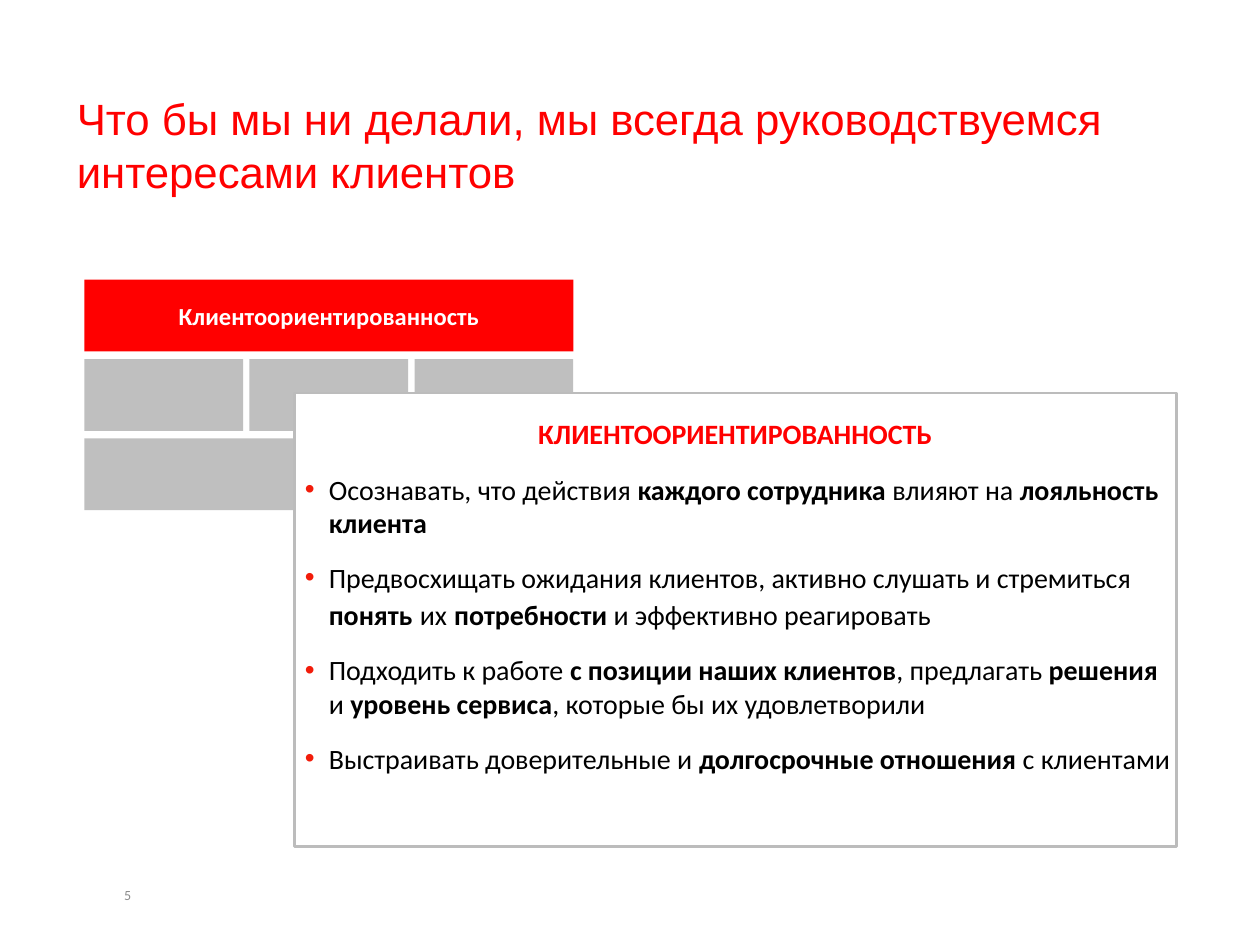
from dataclasses import dataclass

from lxml import etree
from pptx import Presentation
from pptx.dml.color import RGBColor
from pptx.enum.shapes import MSO_SHAPE
from pptx.enum.text import MSO_ANCHOR, MSO_AUTO_SIZE, PP_ALIGN
from pptx.oxml.ns import qn
from pptx.util import Inches, Pt

RECTANGLE = MSO_SHAPE.RECTANGLE
TOP, MIDDLE = MSO_ANCHOR.TOP, MSO_ANCHOR.MIDDLE
LEFT, CENTER, RIGHT = PP_ALIGN.LEFT, PP_ALIGN.CENTER, PP_ALIGN.RIGHT
NO_AUTOFIT = MSO_AUTO_SIZE.NONE

RED = RGBColor(0xFF, 0x00, 0x00)
BULLET_RED = RGBColor(0xF2, 0x1C, 0x0A)
WHITE = RGBColor(0xFF, 0xFF, 0xFF)
BLACK = RGBColor(0x00, 0x00, 0x00)
TILE_GRAY = RGBColor(0xBF, 0xBF, 0xBF)
BORDER_GRAY = RGBColor(0xBC, 0xBC, 0xBC)
NUMBER_GRAY = RGBColor(0x8C, 0x8C, 0x8C)

GRID_LEFT, GRID_TOP = 0.67, 2.22
TILE_WIDTH, TILE_HEIGHT = 1.26, 0.57
COLUMN_STEP, ROW_STEP = 1.31, 0.63
BULLET_INDENT = 0.19


@dataclass(frozen=True)
class Box:
    left: float
    top: float
    width: float
    height: float

    def lengths(self) -> tuple:
        return tuple(map(Inches, (self.left, self.top, self.width, self.height)))


@dataclass(frozen=True)
class Span:
    text: str
    bold: bool = False
    size: float = 16


@dataclass(frozen=True)
class Tile:
    column: int
    row: int
    columns: int = 1

    def box(self) -> Box:
        return Box(GRID_LEFT + self.column * COLUMN_STEP,
                   GRID_TOP + self.row * ROW_STEP,
                   TILE_WIDTH + (self.columns - 1) * COLUMN_STEP, TILE_HEIGHT)


HEADER_TILE = Tile(0, 0, columns=3)
GRAY_TILES = [Tile(0, 2, columns=3), Tile(2, 1), Tile(1, 1), Tile(0, 1)]

TITLE_LINES = [
    [Span("Что бы мы ни делали, мы всегда руководствуемся", size=25)],
    [Span("интересами клиентов", size=25)],
]
PRINCIPLES = [
    [Span("Осознавать, что действия "), Span("каждого сотрудника ", bold=True),
     Span("влияют на "), Span("лояльность клиента", bold=True)],
    [Span("Предвосхищать ожидания клиентов, активно слушать и стремиться "),
     Span("понять", bold=True), Span(" ", size=18), Span("их"), Span(" ", size=18),
     Span("потребности ", bold=True), Span("и эффективно реагировать")],
    [Span("Подходить к работе "), Span("с позиции наших клиентов", bold=True),
     Span(", предлагать "), Span("решения", bold=True), Span(" и "),
     Span("уровень сервиса", bold=True), Span(", которые бы их удовлетворили")],
    [Span("Выстраивать доверительные и "), Span("долгосрочные отношения", bold=True),
     Span(" с клиентами")],
]


def add_bullet(para, color: RGBColor) -> None:
    properties = para._p.get_or_add_pPr()
    properties.set("marL", str(Inches(BULLET_INDENT)))
    properties.set("indent", str(-Inches(BULLET_INDENT)))
    bullet_color = etree.SubElement(properties, qn("a:buClr"))
    etree.SubElement(bullet_color, qn("a:srgbClr"), val=str(color))
    etree.SubElement(properties, qn("a:buFont"), typeface="Arial")
    etree.SubElement(properties, qn("a:buChar"), char="•")


def write(shape, paragraphs: list[list[Span]], *, color: RGBColor,
          font: str = "Calibri", align=LEFT, anchor=TOP, inset: float = 0.1,
          space_before: float = 0, bullets: bool = False, wrap: bool = True) -> None:
    frame = shape.text_frame
    frame.auto_size = NO_AUTOFIT
    frame.word_wrap = wrap
    frame.vertical_anchor = anchor
    frame.margin_left = frame.margin_right = Inches(inset)
    frame.margin_top = frame.margin_bottom = Inches(0.05)
    for index, spans in enumerate(paragraphs):
        para = frame.add_paragraph() if index else frame.paragraphs[0]
        para.alignment = align
        para.space_before = Pt(space_before)
        if bullets:
            add_bullet(para, BULLET_RED)
        for span in spans:
            run = para.add_run()
            run.text = span.text
            run.font.name = font
            run.font.size = Pt(span.size)
            run.font.bold = span.bold
            run.font.color.rgb = color


def add_rectangle(shapes, box: Box, fill: RGBColor, border: RGBColor | None = None):
    shape = shapes.add_shape(RECTANGLE, *box.lengths())
    shape.shadow.inherit = False
    shape.fill.solid()
    shape.fill.fore_color.rgb = fill
    if border is None:
        shape.line.fill.background()
    else:
        shape.line.color.rgb = border
        shape.line.width = Pt(1.5)
    return shape


def add_title(slide) -> None:
    title = slide.shapes.title
    title.left, title.top, title.width, title.height = Box(0.51, 0.68, 8.54, 0.94).lengths()
    write(title, TITLE_LINES, color=RED, font="Arial", wrap=False)


def add_tiles(slide) -> None:
    group = slide.shapes.add_group_shape()
    for tile in GRAY_TILES:
        add_rectangle(group.shapes, tile.box(), TILE_GRAY)
    header = add_rectangle(slide.shapes, HEADER_TILE.box(), RED)
    write(header, [[Span("Клиентоориентированность", bold=True, size=14)]],
          color=WHITE, align=CENTER, anchor=MIDDLE, inset=0.05)


def add_principles_panel(slide) -> None:
    shapes = slide.shapes.add_group_shape().shapes
    add_rectangle(shapes, Box(2.34, 3.12, 7, 3.6), WHITE, BORDER_GRAY)
    heading = add_rectangle(shapes, Box(3.35, 3.33, 4.97, 0.22), WHITE)
    write(heading, [[Span("КЛИЕНТООРИЕНТИРОВАННОСТЬ", bold=True)]],
          color=RED, align=CENTER, anchor=MIDDLE, inset=0)
    body = shapes.add_textbox(*Box(2.38, 3.7, 6.95, 2.79).lengths())
    write(body, PRINCIPLES, color=BLACK, inset=0.04, space_before=12, bullets=True)


def add_page_number(slide) -> None:
    number = slide.shapes.add_textbox(*Box(GRID_LEFT, 7, 0.47, 0.21).lengths())
    write(number, [[Span("5", size=8)]], color=NUMBER_GRAY, align=RIGHT, anchor=MIDDLE)


def main() -> None:
    deck = Presentation()
    deck.slide_width, deck.slide_height = Inches(10), Inches(7.5)
    slide = deck.slides.add_slide(deck.slide_layouts[5])
    add_title(slide)
    add_page_number(slide)
    add_tiles(slide)
    add_principles_panel(slide)
    deck.save("out.pptx")


if __name__ == "__main__":
    main()
